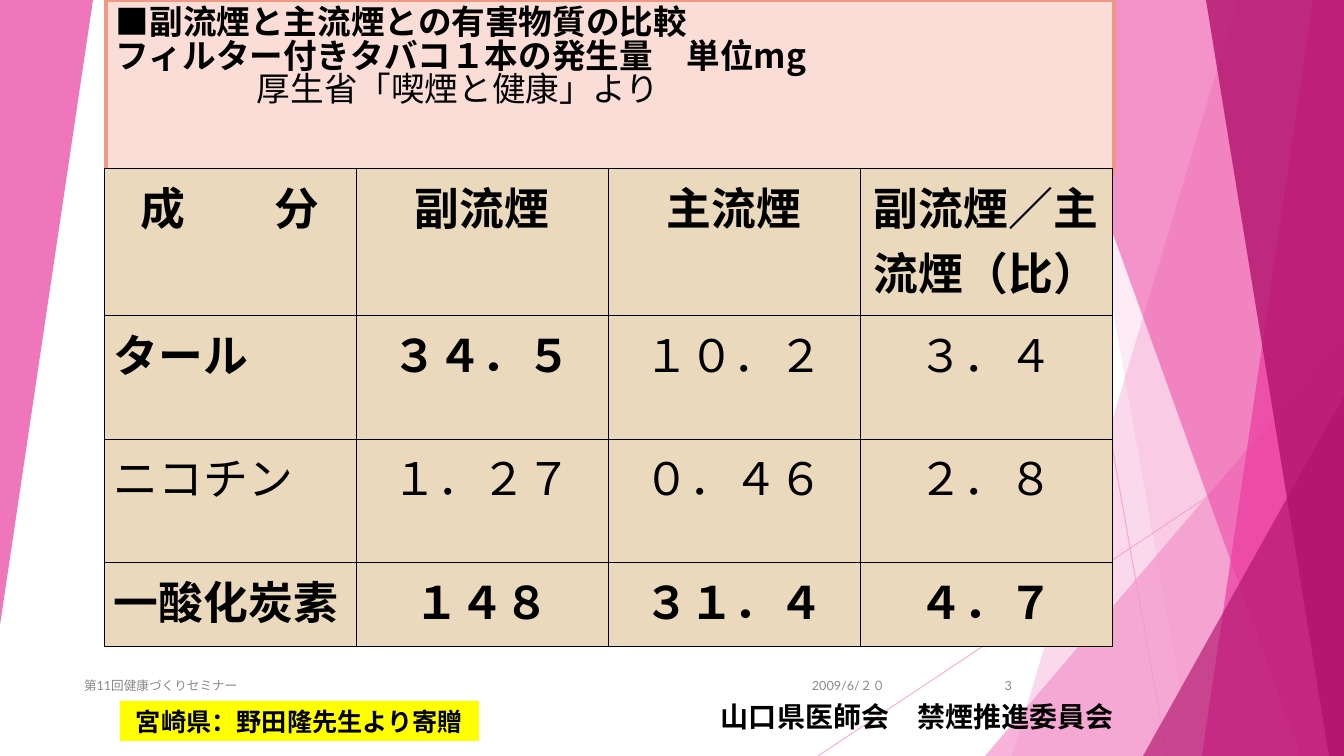
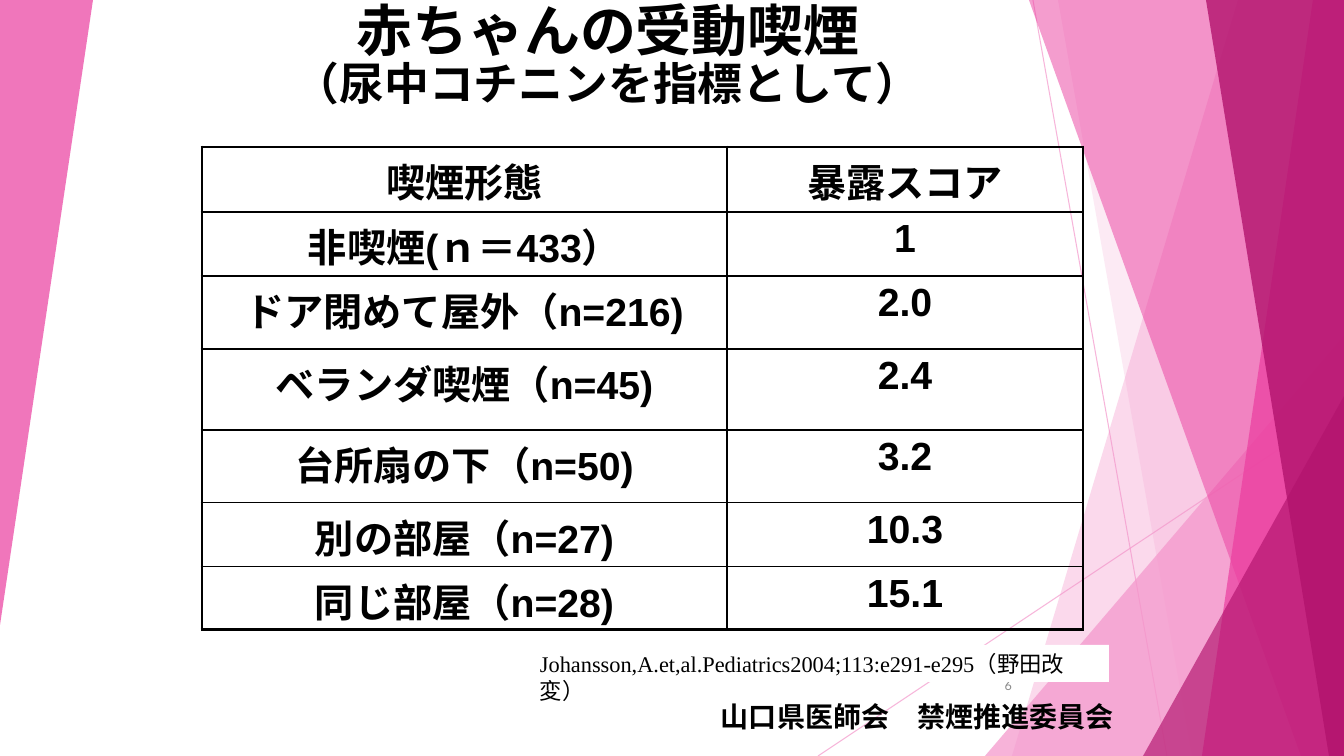
from pptx import Presentation
from pptx.util import Emu, Pt
from pptx.dml.color import RGBColor
from pptx.enum.shapes import MSO_CONNECTOR, MSO_SHAPE
from pptx.enum.text import MSO_ANCHOR as ANCHOR, MSO_AUTO_SIZE as AUTO, PP_ALIGN as ALIGN
from pptx.oxml.ns import qn
from lxml.etree import SubElement

# Shared measures, colours and fonts
SCALE = 914400 / 100.8
PAGE_W, PAGE_H = 1344, 756
BLACK, GREY, WHITE, YELLOW = "000000", "898989", "FFFFFF", "FFFF00"
LIGHT_PINK, PINK, DARK_PINK = "F496CB", "EB3D9F", "B2136D"
ROSE, ROSE_EDGE, SAND = "FADDD6", "F09883", "EAD9BC"
GOTHIC, LATO, ARIAL, TIMES = "Noto Sans CJK JP", "Lato", "Arial", "Times New Roman"


def px(length):
    return Emu(round(length * SCALE))


def box_emu(box):
    return [px(length) for length in box]


def colour(hex_text):
    return RGBColor.from_string(hex_text)


def set_fill(shape, hex_text, alpha=100):
    shape.fill.solid()
    shape.fill.fore_color.rgb = colour(hex_text)
    if alpha < 100:
        set_alpha(shape._element.spPr.find(qn("a:solidFill")), alpha)


def set_alpha(solid_fill, alpha):
    SubElement(solid_fill[0], qn("a:alpha"), val=str(alpha * 1000))


def set_font(target, size, name, hex_text=BLACK, bold=False):
    """Format the font of a paragraph or a run."""
    font = target.font
    font.size, font.name, font.bold = Pt(size), name, bold
    font.color.rgb = colour(hex_text)
    latin = font._element.find(qn("a:latin"))
    east_asian = latin.makeelement(qn("a:ea"), typeface=GOTHIC)
    latin.addnext(east_asian)


def set_frame(frame, anchor, wrap=True, top=5):
    frame.auto_size = AUTO.NONE
    frame.word_wrap = wrap
    frame.vertical_anchor = anchor
    frame.margin_left = frame.margin_right = px(10)
    frame.margin_top, frame.margin_bottom = px(top), px(5)


def add_label(page, box, text, size, name=LATO, hex_text=BLACK, bold=False,
              align=ALIGN.LEFT, anchor=ANCHOR.TOP, wrap=False, fill=None):
    """One line of text, on a coloured strip if a fill is given."""
    if fill:
        label = page.shapes.add_shape(MSO_SHAPE.RECTANGLE, *box_emu(box))
        label.shadow.inherit = False
        label.line.fill.background()
        set_fill(label, fill)
    else:
        label = page.shapes.add_textbox(*box_emu(box))
    set_frame(label.text_frame, anchor, wrap)
    para = label.text_frame.paragraphs[0]
    para.text, para.alignment = text, align
    set_font(para, size, name, hex_text, bold)


# Backdrop: thin lines and translucent facets
def add_thin_line(page, x1, y1, x2, y2):
    line = page.shapes.add_connector(MSO_CONNECTOR.STRAIGHT, *box_emu((x1, y1, x2, y2)))
    line.line.width = Pt(0.75)
    line.line.color.rgb = colour(LIGHT_PINK)
    properties = line._element.spPr
    set_alpha(properties.find(qn("a:ln")).find(qn("a:solidFill")), 70)
    SubElement(properties, qn("a:effectLst"))


def add_facet(page, top_x, bottom_x, hex_text, alpha):
    """A slanted band reaching to the right edge of the page."""
    builder = page.shapes.build_freeform(top_x, 0, scale=SCALE)
    builder.add_line_segments([(PAGE_W, 0), (PAGE_W, PAGE_H), (bottom_x, PAGE_H)], close=True)
    finish_facet(builder.convert_to_shape(), hex_text, alpha)


def add_corner(page, box, hex_text, alpha, rotation=0):
    corner = page.shapes.add_shape(MSO_SHAPE.ISOSCELES_TRIANGLE, *box_emu(box))
    corner.adjustments[0] = 1
    corner.rotation = rotation
    finish_facet(corner, hex_text, alpha)


def finish_facet(shape, hex_text, alpha):
    shape.shadow.inherit = False
    shape.line.fill.background()
    set_fill(shape, hex_text, alpha)


def add_backdrop(page):
    add_thin_line(page, 1033, 0, 1167, PAGE_H)
    add_thin_line(page, PAGE_W, 406, 818, PAGE_H)
    add_facet(page, 1238, 1012, LIGHT_PINK, 36)
    add_facet(page, 1058, 1192, LIGHT_PINK, 20)
    add_corner(page, (985, 336, 359, 420), LIGHT_PINK, 72)
    add_facet(page, 1029, 1301, PINK, 50)
    add_facet(page, 1313, 1202, PINK, 70)
    add_facet(page, 1206, 1329, DARK_PINK, 80)
    add_corner(page, (1143, 396, 201, 360), DARK_PINK, 66)
    add_corner(page, (0, 0, 93, 625), PINK, 70, rotation=180)
    add_label(page, (711, 694, 424, 44), "山口県医師会　禁煙推進委員会", 20, bold=True)


def add_page(deck, number, title_box, title_top):
    """A page with backdrop, page number and an empty title in front."""
    page = deck.slides.add_slide(deck.slide_layouts[5])
    add_backdrop(page)
    add_label(page, (947, 666, 75, 40), number, 9, hex_text=GREY,
              align=ALIGN.RIGHT, anchor=ANCHOR.MIDDLE)
    title = page.shapes.title
    title.left, title.top, title.width, title.height = box_emu(title_box)
    set_frame(title.text_frame, ANCHOR.TOP, top=title_top)
    page.shapes._spTree.append(title._element)
    return page, title


# Tables
def set_borders(cell, widths):
    """Widths in points for left, right, top and bottom."""
    properties = cell._tc.get_or_add_tcPr()
    for index, (side, width) in enumerate(zip(("lnL", "lnR", "lnT", "lnB"), widths)):
        edge = properties.makeelement(qn("a:" + side), w=str(Pt(width)))
        SubElement(SubElement(edge, qn("a:solidFill")), qn("a:srgbClr"), val=BLACK)
        properties.insert(index, edge)


def add_grid(page, left, top, widths, heights, rows, outer, inner, fill=None, bottom=5):
    """A bordered table; returns its cells row by row, to be formatted."""
    box = (left, top, sum(widths), sum(heights))
    table = page.shapes.add_table(len(rows), len(widths), *box_emu(box)).table
    table.first_row = table.horz_banding = False
    for column, width in zip(table.columns, widths):
        column.width = px(width)
    for row, height in zip(table.rows, heights):
        row.height = px(height)
    last_row, last_column = len(rows) - 1, len(widths) - 1
    for r, texts in enumerate(rows):
        for c, text in enumerate(texts):
            cell = table.cell(r, c)
            cell.text = text
            cell.margin_left = cell.margin_right = px(10)
            cell.margin_top, cell.margin_bottom = px(5), px(bottom)
            if fill:
                set_fill_cell(cell, fill)
            else:
                cell.fill.background()
            at_edge = (c == 0, c == last_column, r == 0, r == last_row)
            set_borders(cell, [outer if edge else inner for edge in at_edge])
    return [list(row.cells) for row in table.rows]


def set_fill_cell(cell, hex_text):
    cell.fill.solid()
    cell.fill.fore_color.rgb = colour(hex_text)


# Comparison of sidestream and mainstream smoke
SMOKE_ROWS = [
    ("成分", "副流煙", "主流煙", "副流煙／主流煙（比）"),
    ("タール", "３４．５", "１０．２", "３．４"),
    ("ニコチン", "１．２７", "０．４６", "２．８"),
    ("一酸化炭素", "１４８", "３１．４", "４．７"),
]
PLAIN_CELLS = {(1, 2), (1, 3), (2, 0), (2, 1), (2, 2), (2, 3)}


def add_smoke_page(deck):
    page, title = add_page(deck, "3", (106, 0, 1008, 173), 8)
    add_label(page, (794, 666, 101, 40), "2009/6/２０", 9, hex_text=GREY,
              align=ALIGN.RIGHT, anchor=ANCHOR.MIDDLE)
    add_label(page, (74, 666, 695, 40), "第11回健康づくりセミナー", 9, hex_text=GREY,
              anchor=ANCHOR.MIDDLE)

    # Heading panel
    set_fill(title, ROSE)
    title.line.color.rgb = colour(ROSE_EDGE)
    title.line.width = Pt(2.25)
    title.text_frame.text = ("■副流煙と主流煙との有害物質の比較\n"
                             "フィルター付きタバコ１本の発生量　単位mg\n"
                             "厚生省「喫煙と健康」より")
    paras = title.text_frame.paragraphs
    for para in paras:
        para.alignment, para.line_spacing = ALIGN.LEFT, 0.83
        set_font(para, 24, GOTHIC, bold=para is not paras[-1])
    paras[-1]._p.get_or_add_pPr().set("marL", str(px(141)))

    # Amounts by substance
    cells = add_grid(page, 104, 168, [252] * 4, [147, 124, 124, 84], SMOKE_ROWS,
                     0.75, 0.75, SAND)
    for r, row in enumerate(cells):
        for c, cell in enumerate(row):
            para = cell.text_frame.paragraphs[0]
            para.alignment = ALIGN.JUSTIFY if r and c == 0 else ALIGN.CENTER
            set_font(para, 32, GOTHIC, bold=(r, c) not in PLAIN_CELLS)

    # Spread the two characters of the first heading
    para = cells[0][0].text_frame.paragraphs[0]
    first, second = para.runs[0], para.add_run()
    first.text, second.text = SMOKE_ROWS[0][0]
    first._r.get_or_add_rPr().set("spc", "6400")

    add_label(page, (120, 701, 359, 40), "宮崎県：野田隆先生より寄贈", 18, bold=True,
              align=ALIGN.CENTER, fill=YELLOW)


# Passive smoking of babies
SCORE_ROWS = [
    ("喫煙形態", "暴露スコア"),
    ("非喫煙(ｎ＝433）", "1"),
    ("ドア閉めて屋外（n=216)", "2.0"),
    ("ベランダ喫煙（n=45)", "2.4"),
    ("台所扇の下（n=50)", "3.2"),
    ("別の部屋（n=27)", "10.3"),
    ("同じ部屋（n=28)", "15.1"),
]


def add_baby_page(deck):
    page, title = add_page(deck, "6", (213, 0, 790, 126), 4)

    # Two-line title
    para = title.text_frame.paragraphs[0]
    para.alignment, para.line_spacing = ALIGN.CENTER, 0.88
    for text, size in (("赤ちゃんの受動喫煙", 40), ("（尿中コチニンを指標として）", 32)):
        if para.runs:
            para.add_line_break()
        span = para.add_run()
        span.text = text
        set_font(span, size, LATO, bold=True)

    # Exposure scores
    cells = add_grid(page, 202, 147, [525, 356], [65, 64, 73, 81, 73, 64, 63], SCORE_ROWS,
                     2.25, 1, bottom=0)
    for row in cells:
        for cell in row:
            para = cell.text_frame.paragraphs[0]
            para.alignment = ALIGN.CENTER
            set_font(para, 28, ARIAL, bold=True)

    add_label(page, (530, 645, 579, 37),
              "Johansson,A.et,al.Pediatrics2004;113:e291-e295（野田改変）", 16, TIMES,
              wrap=True, fill=WHITE)


def main():
    deck = Presentation()
    deck.slide_width, deck.slide_height = px(PAGE_W), px(PAGE_H)
    add_smoke_page(deck)
    add_baby_page(deck)
    deck.save("out.pptx")


if __name__ == "__main__":
    main()
